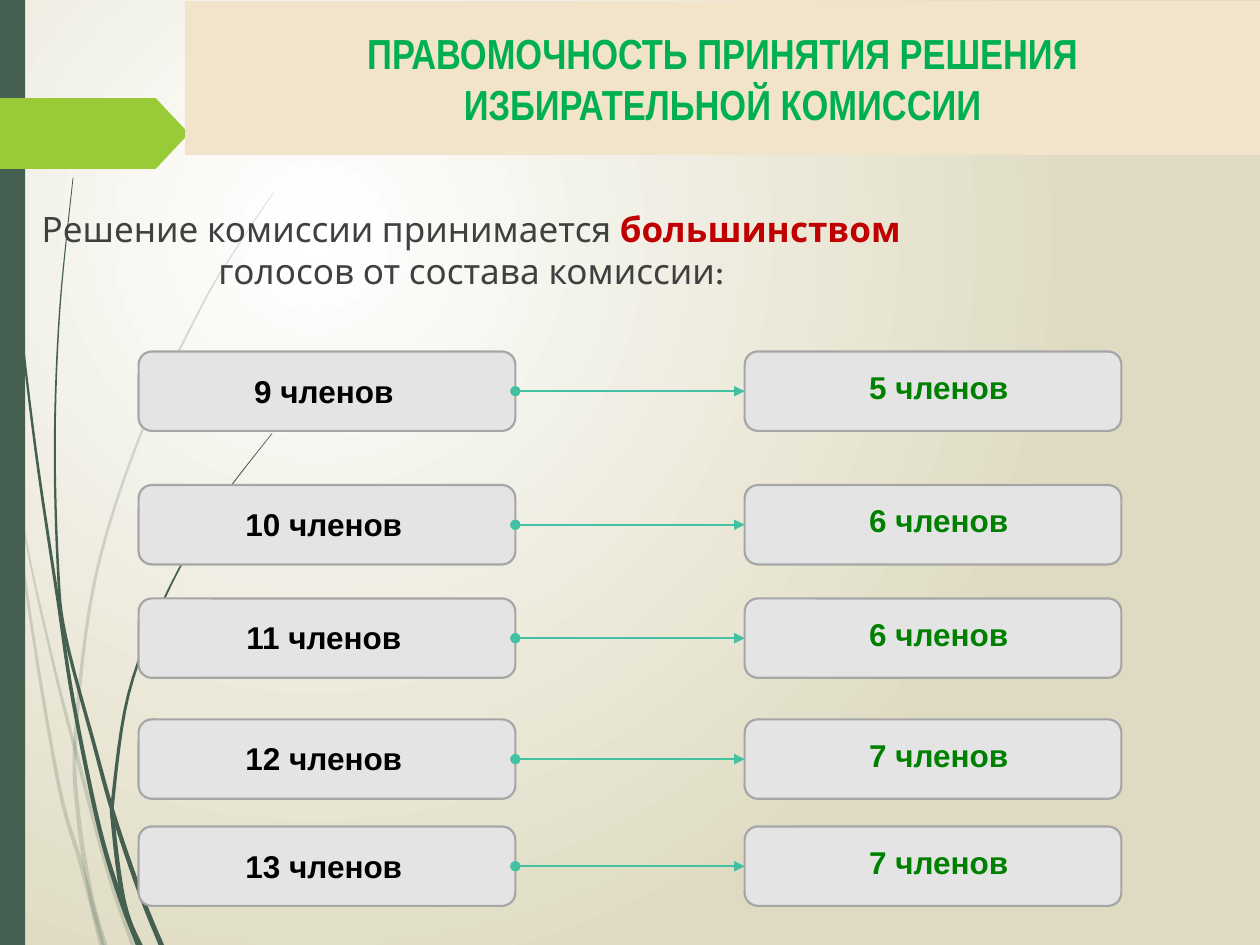
from lxml import etree
from pptx import Presentation
from pptx.dml.color import RGBColor
from pptx.enum.shapes import MSO_CONNECTOR, MSO_SHAPE
from pptx.enum.text import MSO_ANCHOR, MSO_AUTO_SIZE, PP_ALIGN
from pptx.oxml.ns import qn
from pptx.util import Inches, Pt

RECT = MSO_SHAPE.RECTANGLE
ROUND = MSO_SHAPE.ROUNDED_RECTANGLE
PLATE = MSO_SHAPE.PENTAGON
LINE = MSO_CONNECTOR.STRAIGHT
MID = MSO_ANCHOR.MIDDLE
TOP = MSO_ANCHOR.TOP
FIXED = MSO_AUTO_SIZE.NONE
CENTER = PP_ALIGN.CENTER

UNIT = Inches(0.1)
COLORS = {
    "white": "FFFFFF", "sand": "DFDBC2", "stem": "455F51", "lime": "99CB38",
    "band": "F2E4CA", "title": "00B050", "text": "404040", "red": "C00000",
    "box": "E4E4E4", "edge": "A6A6A6", "link": "44C1A3",
    "black": "000000", "green": "008000",
}
BOX = (29.9, 6.3)
LABEL = (15.2, 4)
LEFT, RIGHT = 11, 59.1
ROWS = [
    (27.9, "9 членов", "5 членов"),
    (38.5, "10 членов", "6 членов"),
    (47.5, "11 членов", "6 членов"),
    (57.1, "12 членов", "7 членов"),
    (65.6, "13 членов", "7 членов"),
]
PALE = [
    [(0, 29), (0.8, 35), (2, 46.2), (4.6, 62), (6.5, 68.8), (8.1, 75)],
    [(1, 34.5), (2, 42.5), (4.1, 52.1), (5.9, 59.2), (8.6, 69.2), (10.6, 75)],
    [(21.7, 15.3), (18.7, 19.8), (15.9, 24.5), (11, 34.9), (7.5, 46.2),
     (6, 58.4), (6.2, 64.6), (7.2, 71), (8.3, 75)],
]
DARK = [
    [(0.3, 0), (0.5, 11), (1.4, 23.3), (2.8, 35.5), (4.6, 47.7),
     (5.8, 55.6), (7.9, 65.8), (9.8, 72), (11.1, 75)],
    [(5.8, 14.1), (4.75, 24.5), (4.35, 34.9), (4.6, 45), (5.2, 50.5),
     (7.5, 59.2), (9, 64.6), (11.1, 70.8), (12.8, 75)],
    [(21.6, 34.4), (16.9, 40.6), (13, 47.6), (10.2, 55.1), (9, 63.1),
     (9, 65.6), (9.8, 71.5), (11, 75)],
]


def tone(name):
    """Return a named colour."""
    return RGBColor.from_string(COLORS[name])


def units(*vals):
    """Turn grid units into slide lengths."""
    return [round(val * UNIT) for val in vals]


def paint(shape, fill, edge=None):
    """Give a shape its flat fill and its outline."""
    shape.shadow.inherit = False
    shape.fill.solid()
    shape.fill.fore_color.rgb = tone(fill)
    if edge:
        shape.line.color.rgb = tone(edge)
        shape.line.width = Pt(1.25)
    else:
        shape.line.fill.background()


def block(shapes, kind, area, fill, edge=None):
    """Add a preset shape on the grid."""
    shape = shapes.add_shape(kind, *units(*area))
    paint(shape, fill, edge)
    return shape


def write(para, text, size, font, color, bold=False):
    """Add one formatted run."""
    run = para.add_run()
    run.text = text
    run.font.size = Pt(size)
    run.font.name = font
    run.font.bold = bold
    run.font.color.rgb = tone(color)


def backdrop(slide):
    """Fill the background with a round glow."""
    fill = slide.background.fill
    fill.gradient()
    for stop, name in zip(fill.gradient_stops, ("white", "sand")):
        stop.color.rgb = tone(name)
    grad = slide.element.find(".//" + qn("a:gradFill"))
    grad.remove(grad.find(qn("a:lin")))
    glow = etree.SubElement(grad, qn("a:path"), path="circle")
    etree.SubElement(glow, qn("a:fillToRect"),
                     l="50000", t="50000", r="100000", b="100000")


def curve(knots, steps=6):
    """Return points of a smooth curve through the knots."""
    ends = [knots[0], *knots, knots[-1]]
    points = []
    for a, b, c, d in zip(ends, ends[1:], ends[2:], ends[3:]):
        for step in range(steps):
            t = step / steps
            points.append(tuple(
                q + t * (r - p) / 2 + t * t * (p - 2.5 * q + 2 * r - s / 2)
                + t ** 3 * (1.5 * (q - r) + (s - p) / 2)
                for p, q, r, s in zip(a, b, c, d)))
    return points + [knots[-1]]


def blade(shapes, knots, alpha=None):
    """Draw a grass blade that widens towards its foot."""
    points = curve(knots)
    last = len(points) - 1
    half = [0.03 + 0.19 * i / last for i in range(last + 1)]
    near = [units(x - w, y) for (x, y), w in zip(points, half)]
    far = [units(x + w, y) for (x, y), w in zip(points, half)]
    form = shapes.build_freeform(*near[0])
    form.add_line_segments(near[1:] + far[::-1])
    shape = form.convert_to_shape()
    paint(shape, "stem")
    if alpha:
        color = shape.element.find(".//" + qn("a:srgbClr"))
        etree.SubElement(color, qn("a:alpha"), val=str(alpha * 1000))


def frame(holder, area, anchor):
    """Move a placeholder to the front and return its paragraph."""
    holder.left, holder.top, holder.width, holder.height = units(*area)
    tree = holder.element.getparent()
    tree.append(holder.element)
    text = holder.text_frame
    text.auto_size = FIXED
    text.word_wrap = True
    text.vertical_anchor = anchor
    para = text.paragraphs[0]
    para.alignment = CENTER
    return para


def heading(holder):
    """Set the title on its band."""
    holder.fill.solid()
    holder.fill.fore_color.rgb = tone("band")
    para = frame(holder, (14.7, 0.1, 85.3, 12.2), MID)
    write(para, "ПРАВОМОЧНОСТЬ ПРИНЯТИЯ РЕШЕНИЯ", 24, "Arial Narrow", "title", True)
    para.add_line_break()
    write(para, "ИЗБИРАТЕЛЬНОЙ КОМИССИИ", 24, "Arial Narrow", "title", True)


def intro(holder):
    """Set the sentence above the rows."""
    para = frame(holder, (0, 16, 74.8, 7.8), TOP)
    para.space_before = Pt(10)
    props = para._p.get_or_add_pPr()
    props.set("marL", "0")
    props.set("indent", "0")
    etree.SubElement(props, qn("a:buNone"))
    font = "League Spartan"
    write(para, "Решение комиссии принимается ", 20, font, "text")
    write(para, "большинством ", 20, font, "red", True)
    write(para, "голосов от состава комиссии:", 20, font, "text")


def label(shapes, x, y, text, color):
    """Add a bold caption."""
    shape = block(shapes, RECT, (x, y, *LABEL), "box")
    shape.text_frame.word_wrap = True
    shape.text_frame.vertical_anchor = TOP
    para = shape.text_frame.paragraphs[0]
    para.alignment = CENTER
    write(para, text, 18, "Arial", color, True)


def link(shapes, start, end):
    """Join two boxes with an arrow."""
    line = shapes.add_connector(LINE, 0, 0, 0, 0)
    line.begin_connect(start, 3)
    line.end_connect(end, 1)
    line.line.color.rgb = tone("link")
    line.line.width = Pt(1.25)
    stroke = line.element.find(".//" + qn("a:ln"))
    etree.SubElement(stroke, qn("a:headEnd"), type="oval")
    etree.SubElement(stroke, qn("a:tailEnd"), type="triangle")
    etree.SubElement(line.element.spPr, qn("a:effectLst"))


def pair(slide, y, total, votes):
    """Add a row: members and the votes they need."""
    shapes = slide.shapes.add_group_shape().shapes
    start = block(shapes, ROUND, (LEFT, y, *BOX), "box", "edge")
    end = block(shapes, ROUND, (RIGHT, y, *BOX), "box", "edge")
    link(shapes, start, end)
    label(shapes, LEFT + 7.1, y + 1.1, total, "black")
    label(shapes, RIGHT + 7.8, y + 0.8, votes, "green")


def main():
    """Build and save the slide."""
    deck = Presentation()
    deck.slide_width, deck.slide_height = units(100, 75)
    slide = deck.slides.add_slide(deck.slide_layouts[1])
    shapes = slide.shapes
    backdrop(slide)
    for knots in PALE:
        blade(shapes, knots, 20)
    for knots in DARK:
        blade(shapes, knots)
    block(shapes, RECT, (0, 0, 2, 75), "stem")
    plate = block(shapes, PLATE, (0, 7.8, 15, 5.6), "lime")
    plate.adjustments[0] = 0.47
    heading(shapes.title)
    intro(slide.placeholders[1])
    for row in ROWS:
        pair(slide, *row)
    deck.save("out.pptx")


if __name__ == "__main__":
    main()
